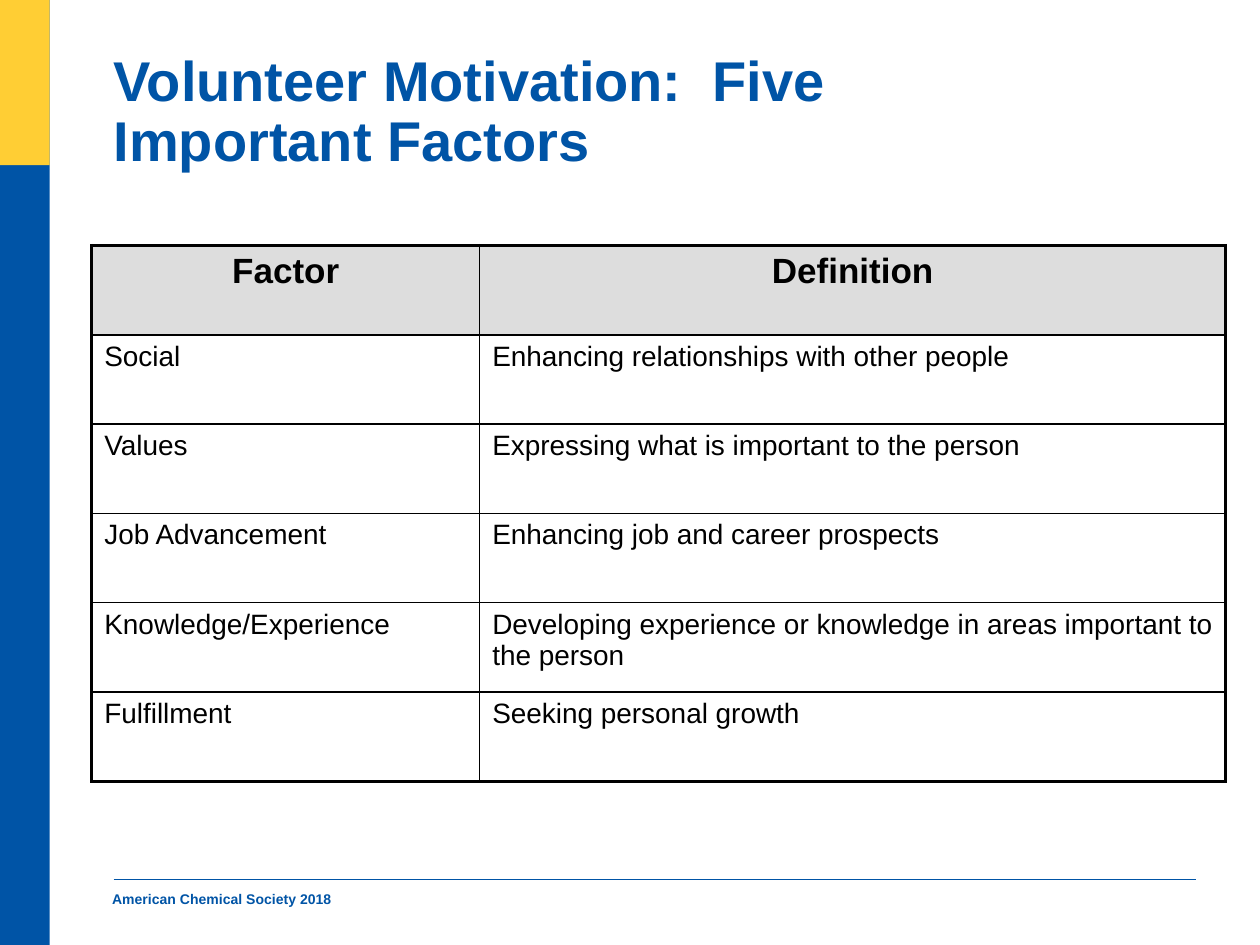
"""Build the slide on five factors of volunteer motivation."""
from dataclasses import dataclass

from lxml.etree import SubElement
from pptx import Presentation
from pptx.dml.color import RGBColor as Rgb
from pptx.enum.shapes import MSO_CONNECTOR as Connector, MSO_SHAPE as Shape
from pptx.enum.text import MSO_ANCHOR as Anchor, MSO_AUTO_SIZE as AutoSize, PP_ALIGN as Align
from pptx.oxml.ns import qn
from pptx.util import Cm, Pt


@dataclass(frozen=True)
class Theme:
    """Colours, type sizes and line widths of the slide."""
    font: str = "Arial"
    blue: str = "0054A6"
    yellow: str = "FFCE34"
    grey: str = "DDDDDD"
    black: str = "000000"
    title: int = 32
    header: int = 20
    body: int = 16
    footer: int = 8
    outer: float = 2.25
    inner: float = 1
    rule: float = 0.75


class FactorSlide:
    """Hold the theme and the slide, and add each kind of element."""

    def __init__(self, slide, theme):
        self.slide = slide
        self.theme = theme

    def add_text(self, paragraph, text, size, color, bold=False):
        """Add one formatted run to a paragraph."""
        run = paragraph.add_run()
        run.text = text
        run.font.name = self.theme.font
        run.font.size = Pt(size)
        run.font.bold = bold
        run.font.color.rgb = Rgb.from_string(color)

    def frame(self, holder, anchor):
        """Prepare a wrapping text frame without insets."""
        frame = holder.text_frame
        frame.word_wrap = True
        frame.auto_size = AutoSize.NONE
        frame.vertical_anchor = anchor
        frame.margin_left = frame.margin_right = frame.margin_top = frame.margin_bottom = 0
        return frame

    def title(self, text, left, top, width, height):
        """Fill and place the title placeholder."""
        heading = self.slide.shapes.title
        heading.left, heading.top = Cm(left), Cm(top)
        heading.width, heading.height = Cm(width), Cm(height)
        paragraph = self.frame(heading, Anchor.BOTTOM).paragraphs[0]
        paragraph.alignment = Align.LEFT
        paragraph.line_spacing = 0.9
        self.add_text(paragraph, text, self.theme.title, self.theme.blue, True)

    def band(self, color, left, top, width, height):
        """Add a plain filled rectangle."""
        band = self.slide.shapes.add_shape(
            Shape.RECTANGLE, Cm(left), Cm(top), Cm(width), Cm(height))
        band.shadow.inherit = False
        band.fill.solid()
        band.fill.fore_color.rgb = Rgb.from_string(color)
        band.line.fill.background()

    def rule(self, left, right, top):
        """Add a thin horizontal line."""
        rule = self.slide.shapes.add_connector(
            Connector.STRAIGHT, Cm(left), Cm(top), Cm(right), Cm(top))
        rule.line.color.rgb = Rgb.from_string(self.theme.blue)
        rule.line.width = Pt(self.theme.rule)
        SubElement(rule._element.spPr, qn("a:effectLst"))

    def footer(self, text, left, top, width, height):
        """Add the small footer text."""
        footer = self.slide.shapes.add_textbox(Cm(left), Cm(top), Cm(width), Cm(height))
        paragraph = self.frame(footer, Anchor.TOP).paragraphs[0]
        self.add_text(paragraph, text, self.theme.footer, self.theme.blue, True)

    def borders(self, cell, outer_sides):
        """Draw the four cell borders, heavier on the outer sides."""
        properties = cell._tc.get_or_add_tcPr()
        for side in "LRTB":
            width = self.theme.outer if side in outer_sides else self.theme.inner
            line = SubElement(properties, qn(f"a:ln{side}"), w=str(Pt(width)))
            SubElement(SubElement(line, qn("a:solidFill")), qn("a:srgbClr"), val=self.theme.black)

    def table(self, rows, left, top, widths, row_height):
        """Add a table with a shaded header and a heavy outline."""
        table = self.slide.shapes.add_table(
            len(rows), len(widths), Cm(left), Cm(top),
            Cm(sum(widths)), Cm(row_height * len(rows))).table
        table.horz_banding = False
        for column, width in zip(table.columns, widths):
            column.width = Cm(width)
        last_row, last_column = len(rows) - 1, len(widths) - 1
        for r, texts in enumerate(rows):
            table.rows[r].height = Cm(row_height)
            is_header = r == 0
            for c, text in enumerate(texts):
                cell = table.cell(r, c)
                edges = {"L": c == 0, "R": c == last_column, "T": is_header, "B": r == last_row}
                self.borders(cell, [side for side, outer in edges.items() if outer])
                if is_header:
                    cell.fill.solid()
                    cell.fill.fore_color.rgb = Rgb.from_string(self.theme.grey)
                else:
                    cell.fill.background()
                paragraph = cell.text_frame.paragraphs[0]
                paragraph.alignment = Align.CENTER if is_header else Align.LEFT
                size = self.theme.header if is_header else self.theme.body
                self.add_text(paragraph, text, size, self.theme.black, is_header)


FACTORS = [
    ("Factor", "Definition"),
    ("Social", "Enhancing relationships with other people"),
    ("Values", "Expressing what is important to the person"),
    ("Job Advancement", "Enhancing job and career prospects"),
    ("Knowledge/Experience", "Developing experience or knowledge in areas important to the person"),
    ("Fulfillment", "Seeking personal growth"),
]


def main():
    """Build and save the presentation."""
    deck = Presentation()
    deck.slide_width, deck.slide_height = Cm(25.4), Cm(19.05)
    theme = Theme()
    page = FactorSlide(deck.slides.add_slide(deck.slide_layouts[5]), theme)
    page.band(theme.blue, 0, 0, 1, 19.05)
    page.band(theme.yellow, 0, 0, 1, 3.33)
    page.rule(2.29, 24.1, 17.73)
    page.title("Volunteer Motivation:  Five Important Factors", 2.29, 0.89, 15.6, 2.62)
    page.table(FACTORS, 1.85, 4.95, (7.82, 15.04), 1.8)
    page.footer("American Chemical Society 2018", 2.26, 17.96, 8.05, 0.79)
    deck.save("out.pptx")


if __name__ == "__main__":
    main()
